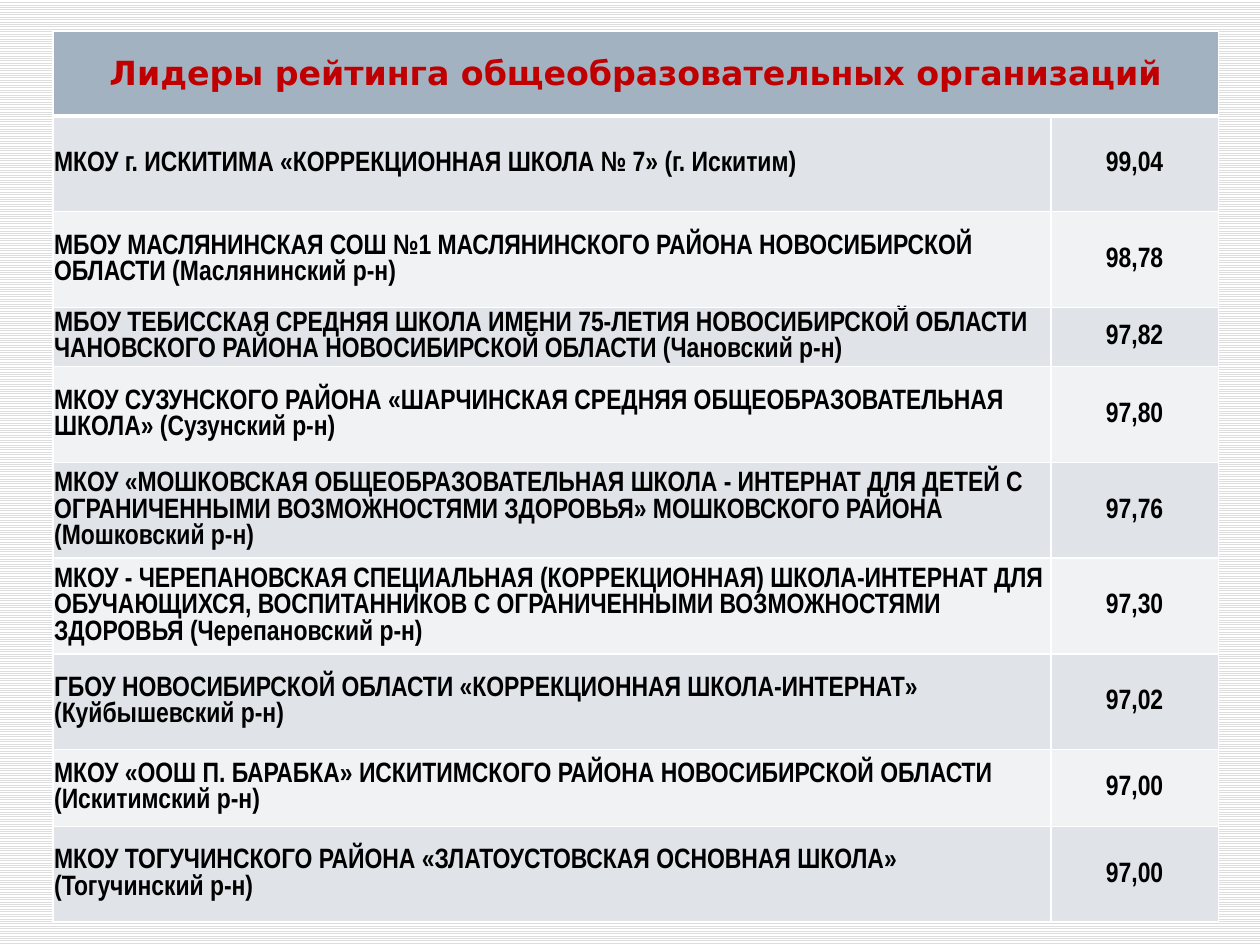
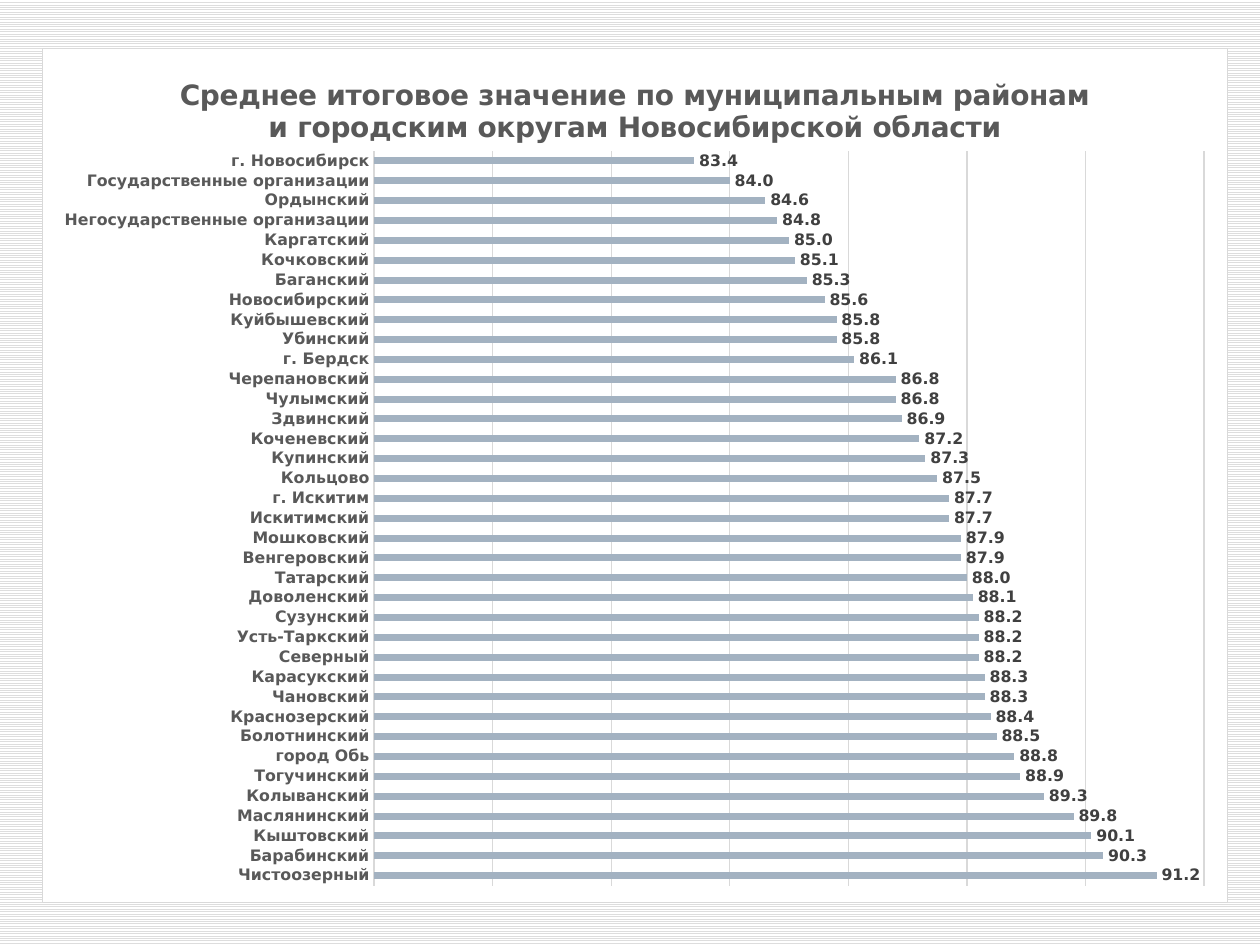
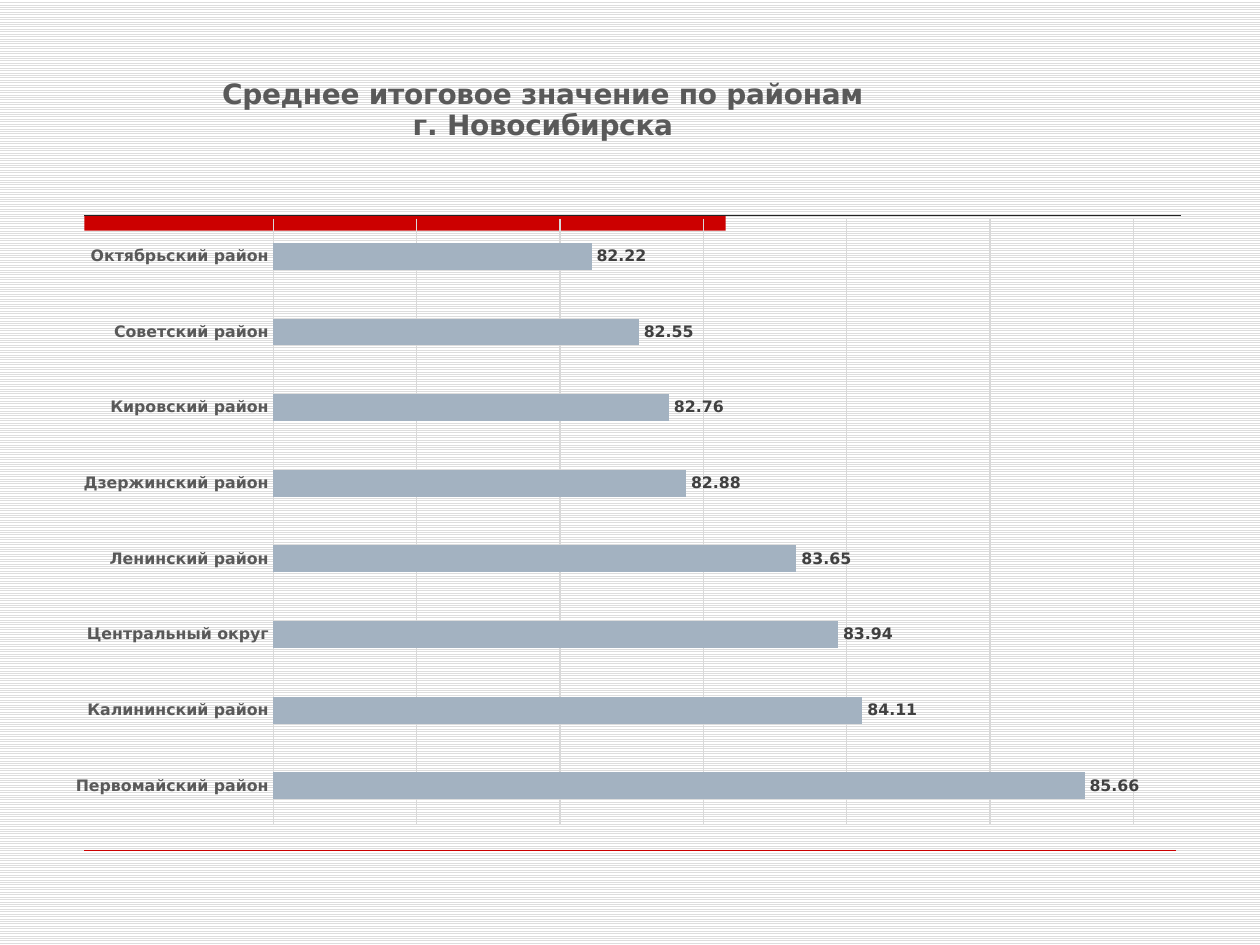
from pptx import Presentation
from pptx import util as u
from pptx.chart.data import CategoryChartData
from pptx.dml.color import RGBColor
from pptx.enum import chart as charts, dml, shapes, text
from pptx.oxml import parse_xml
from pptx.oxml.ns import nsdecls, qn

SCHOOLS = [
    ("МКОУ г. ИСКИТИМА «КОРРЕКЦИОННАЯ ШКОЛА № 7» (г. Искитим)", "99,04"),
    ("МБОУ МАСЛЯНИНСКАЯ СОШ №1 МАСЛЯНИНСКОГО РАЙОНА НОВОСИБИРСКОЙ ОБЛАСТИ (Маслянинский р-н)", "98,78"),
    ("МБОУ ТЕБИССКАЯ СРЕДНЯЯ ШКОЛА ИМЕНИ 75-ЛЕТИЯ НОВОСИБИРСКОЙ ОБЛАСТИ "
     "ЧАНОВСКОГО РАЙОНА НОВОСИБИРСКОЙ ОБЛАСТИ (Чановский р-н)", "97,82"),
    ("МКОУ СУЗУНСКОГО РАЙОНА «ШАРЧИНСКАЯ СРЕДНЯЯ ОБЩЕОБРАЗОВАТЕЛЬНАЯ ШКОЛА» (Сузунский р-н)", "97,80"),
    ("МКОУ «МОШКОВСКАЯ ОБЩЕОБРАЗОВАТЕЛЬНАЯ ШКОЛА - ИНТЕРНАТ ДЛЯ ДЕТЕЙ С ОГРАНИЧЕННЫМИ "
     "ВОЗМОЖНОСТЯМИ ЗДОРОВЬЯ» МОШКОВСКОГО РАЙОНА (Мошковский р-н)", "97,76"),
    ("МКОУ - ЧЕРЕПАНОВСКАЯ СПЕЦИАЛЬНАЯ (КОРРЕКЦИОННАЯ) ШКОЛА-ИНТЕРНАТ ДЛЯ ОБУЧАЮЩИХСЯ, "
     "ВОСПИТАННИКОВ С ОГРАНИЧЕННЫМИ ВОЗМОЖНОСТЯМИ ЗДОРОВЬЯ (Черепановский р-н)", "97,30"),
    ("ГБОУ НОВОСИБИРСКОЙ ОБЛАСТИ «КОРРЕКЦИОННАЯ ШКОЛА-ИНТЕРНАТ» (Куйбышевский р-н)", "97,02"),
    ("МКОУ «ООШ П. БАРАБКА» ИСКИТИМСКОГО РАЙОНА НОВОСИБИРСКОЙ ОБЛАСТИ (Искитимский р-н)", "97,00"),
    ("МКОУ ТОГУЧИНСКОГО РАЙОНА «ЗЛАТОУСТОВСКАЯ ОСНОВНАЯ ШКОЛА» (Тогучинский р-н)", "97,00"),
]
ROW_HEIGHTS = [0.67, 0.76, 0.76, 0.47, 0.76, 0.76, 0.76, 0.76, 0.61, 0.76]

REGIONS = {
    "Чистоозерный": 91.2, "Барабинский": 90.3, "Кыштовский": 90.1, "Маслянинский": 89.8,
    "Колыванский": 89.3, "Тогучинский": 88.9, "город Обь": 88.8, "Болотнинский": 88.5,
    "Краснозерский": 88.4, "Чановский": 88.3, "Карасукский": 88.3, "Северный": 88.2,
    "Усть-Таркский": 88.2, "Сузунский": 88.2, "Доволенский": 88.1, "Татарский": 88,
    "Венгеровский": 87.9, "Мошковский": 87.9, "Искитимский": 87.7, "г. Искитим": 87.7,
    "Кольцово": 87.5, "Купинский": 87.3, "Коченевский": 87.2, "Здвинский": 86.9,
    "Чулымский": 86.8, "Черепановский": 86.8, "г. Бердск": 86.1, "Убинский": 85.8,
    "Куйбышевский": 85.8, "Новосибирский": 85.6, "Баганский": 85.3, "Кочковский": 85.1,
    "Каргатский": 85, "Негосударственные организации": 84.8, "Ордынский": 84.6,
    "Государственные организации": 84, "г. Новосибирск": 83.4,
}
DISTRICTS = {
    "Первомайский район": 85.66, "Калининский район": 84.11, "Центральный округ": 83.94,
    "Ленинский район": 83.65, "Дзержинский район": 82.88, "Кировский район": 82.76,
    "Советский район": 82.55, "Октябрьский район": 82.22,
}


def color(value):
    return RGBColor.from_string(value)


def style_font(font, size, ink, name="DejaVu Sans", bold=True):
    font.size, font.name, font.bold = u.Pt(size), name, bold
    font.color.rgb = color(ink)


def write(frame, words, align=None, **font):
    for number, line in enumerate(words.split("\n")):
        para = frame.add_paragraph() if number else frame.paragraphs[0]
        para.alignment = align
        span = para.add_run()
        span.text = line
        style_font(span.font, **font)


def solid(value):
    return f'<a:solidFill><a:srgbClr val="{value}"/></a:solidFill>' if value else "<a:noFill/>"


def chart_area(fill=None, border=None):
    return parse_xml(f'<c:spPr {nsdecls("c", "a")}>{solid(fill)}'
                     f'<a:ln w="9525">{solid(border)}</a:ln></c:spPr>')


def place(parent, index, **numbers):
    old = parent.find(qn("c:layout"))
    if old is not None:
        parent.remove(old)
    modes = {"xMode": "edge", "yMode": "edge"}
    if "w" in numbers:
        modes = {"layoutTarget": "inner", **modes}
    items = "".join(f'<c:{key} val="{value}"/>' for key, value in {**modes, **numbers}.items())
    parent.insert(index, parse_xml(
        f'<c:layout {nsdecls("c")}><c:manualLayout>{items}</c:manualLayout></c:layout>'))


class Deck:
    red, steel, grid, gray = "CC0000", "A3B2C1", "D9D9D9", "595959"
    stripes = ("F0F2F4", "E0E4E9")

    def __init__(self):
        self.deck = Presentation()
        self.deck.slide_width, self.deck.slide_height = u.Inches(10), u.Inches(7.5)
        self.add_page()
        self.master_style()

    def add_page(self):
        self.page = self.deck.slides.add_slide(self.deck.slide_layouts[6])

    def master_style(self):
        master = self.deck.slide_master
        fill = master.background.fill
        fill.patterned()
        fill.pattern = dml.MSO_PATTERN.LIGHT_HORIZONTAL
        fill.fore_color.rgb, fill.back_color.rgb = color("DDDDDD"), color("FFFFFF")
        parts = [self.band(0.67, 1.71, 5.09, 0.12),
                 self.rule(0.67, 9.37, 1.71, "222222", 0.75),
                 self.rule(0.67, 9.33, 6.75, self.red, 0.25)]
        for number, part in enumerate(parts, 100):
            part.element.xpath(".//p:cNvPr")[0].set("id", str(number))
            master.shapes.element.append(part.element)

    def band(self, left, top, width, height):
        box = self.page.shapes.add_shape(shapes.MSO_SHAPE.RECTANGLE, *map(u.Inches, (left, top, width, height)))
        box.shadow.inherit = False
        box.fill.solid()
        box.fill.fore_color.rgb = color(self.red)
        box.line.fill.background()
        return box

    def rule(self, left, right, top, ink, weight):
        line = self.page.shapes.add_connector(
            shapes.MSO_CONNECTOR.STRAIGHT, *map(u.Inches, (left, top, right, top)))
        line.line.color.rgb, line.line.width = color(ink), u.Pt(weight)
        line.element.spPr.append(parse_xml(f'<a:effectLst {nsdecls("a")}/>'))
        return line

    def cell(self, cell, words, fill, margins, bottom=1, **style):
        properties = cell._tc.get_or_add_tcPr()
        for side, weight in zip("LRTB", (1, 1, 1, bottom)):
            properties.append(parse_xml(
                f'<a:ln{side} {nsdecls("a")} w="{u.Pt(weight)}">{solid("FFFFFF")}</a:ln{side}>'))
        cell.fill.solid()
        cell.fill.fore_color.rgb = color(fill)
        cell.margin_left, cell.margin_top, cell.margin_right, cell.margin_bottom = map(u.Inches, margins)
        cell.vertical_anchor = text.MSO_ANCHOR.MIDDLE
        if words:
            write(cell.text_frame, words, **style)

    def rating(self, title, records):
        table = self.page.shapes.add_table(
            len(records) + 1, 2, *map(u.Inches, (0.42, 0.25, 9.25, sum(ROW_HEIGHTS)))).table
        for column, width in zip(table.columns, (7.92, 1.33)):
            column.width = u.Inches(width)
        for row, height in zip(table.rows, ROW_HEIGHTS):
            row.height = u.Inches(height)
        table.cell(0, 0).merge(table.cell(0, 1))
        center = text.PP_ALIGN.CENTER
        for column, words in enumerate((title, "")):
            self.cell(table.cell(0, column), words, self.steel, (0.07, 0, 0.07, 0), bottom=3,
                      align=center, size=19, ink="C00000")
        for row, record in enumerate(records, 1):
            for column, words in enumerate(record):
                self.cell(table.cell(row, column), words, self.stripes[row % 2], (0.01, 0.01, 0.01, 0),
                          align=center if column else text.PP_ALIGN.LEFT,
                          size=16, ink="000000", name="Arial Narrow")

    def bars(self, title, scores, frame, scale, number_format, plot, title_at=None, fill=None, border=None):
        data = CategoryChartData(number_format=number_format)
        data.categories = scores.keys()
        data.add_series("Series 1", scores.values())
        chart = self.page.shapes.add_chart(
            charts.XL_CHART_TYPE.BAR_CLUSTERED, *map(u.Inches, frame), data).chart
        chart.has_legend = False
        style_font(chart.font, 10, "000000", bold=False)
        chart.has_title = True
        write(chart.chart_title.text_frame, title, size=16, ink=self.gray)

        category = chart.category_axis
        category.major_tick_mark = category.minor_tick_mark = charts.XL_TICK_MARK.NONE
        category.format.line.color.rgb, category.format.line.width = color(self.grid), u.Pt(0.75)
        style_font(category.tick_labels.font, 9, self.gray)

        value = chart.value_axis
        value.minimum_scale, value.maximum_scale, value.major_unit = scale
        value.has_major_gridlines = True
        line = value.major_gridlines.format.line
        line.color.rgb, line.width = color(self.grid), u.Pt(0.75)
        value.visible = False

        bars = chart.plots[0]
        bars.gap_width, bars.vary_by_categories = 182, False
        series = bars.series[0]
        series.format.fill.solid()
        series.format.fill.fore_color.rgb = color(self.steel)
        bars.has_data_labels = True
        labels = bars.data_labels
        labels.show_value, labels.position = True, charts.XL_LABEL_POSITION.OUTSIDE_END
        labels.number_format, labels.number_format_is_linked = number_format, False
        style_font(labels.font, 9, "404040")

        space = chart.element
        body = space.find(qn("c:chart"))
        area = body.find(qn("c:plotArea"))
        place(area, 0, **dict(zip("xywh", plot)))
        area.append(chart_area())
        body.addnext(chart_area(fill, border))
        if title_at:
            place(body.find(qn("c:title")), 1, **dict(zip("xy", title_at)))


def main():
    show = Deck()
    show.rating("Лидеры рейтинга общеобразовательных организаций", SCHOOLS)
    show.add_page()
    show.bars("Среднее итоговое значение по муниципальным районам и городским округам Новосибирской области",
              REGIONS, (0.33, 0.38, 9.42, 6.79), (78, 92, 2), "0.0",
              plot=(0.28, 0.12, 0.7, 0.86), fill="FFFFFF", border=show.grid)
    show.add_page()
    show.bars("Среднее итоговое значение по районам\nг. Новосибирска",
              DISTRICTS, (0.42, 0.58, 8.75, 6.08), (80, 86, 1), "0.00",
              plot=(0.2, 0.19, 0.78, 0.79), title_at=(0.15, 0))
    show.deck.save("out.pptx")


if __name__ == "__main__":
    main()
